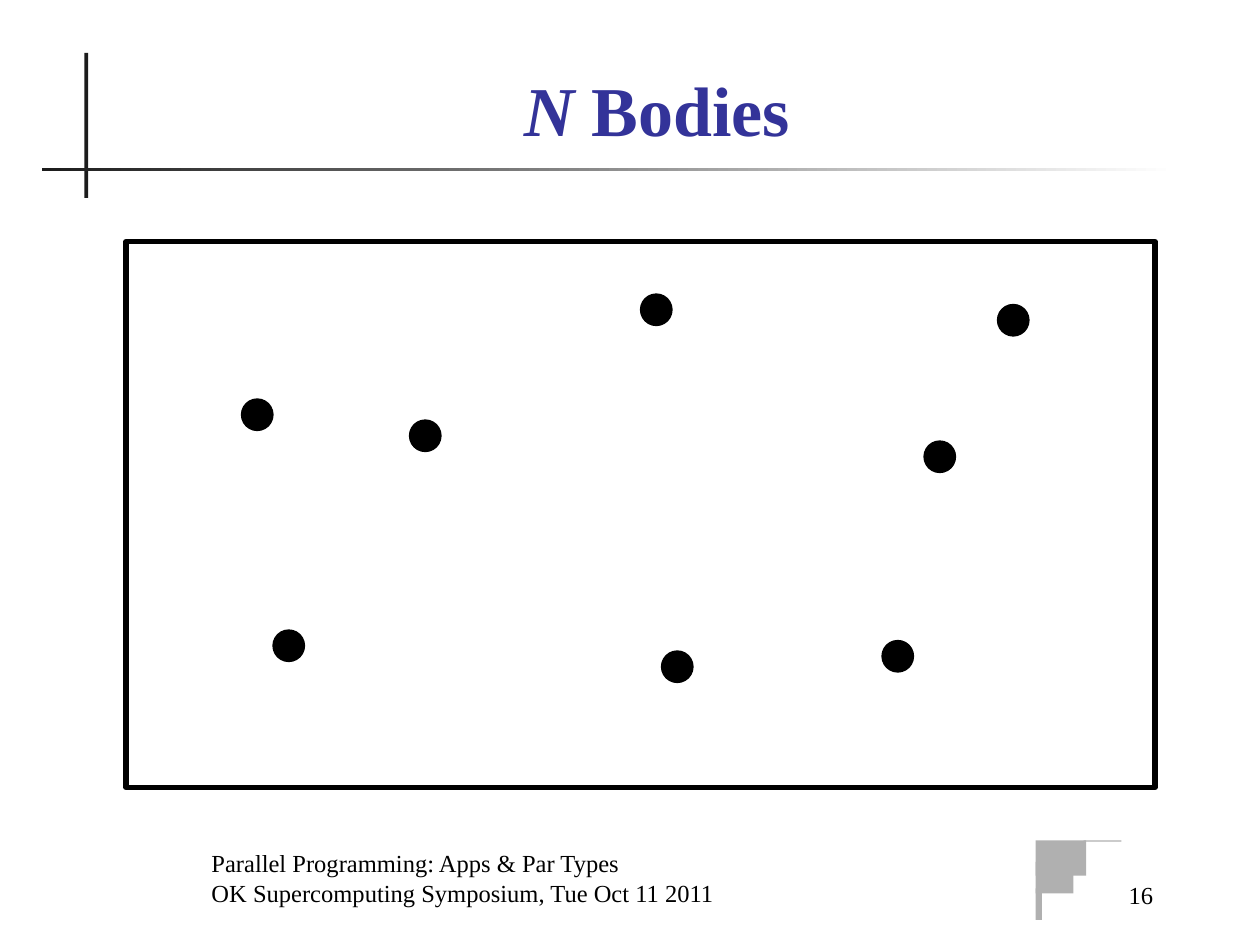
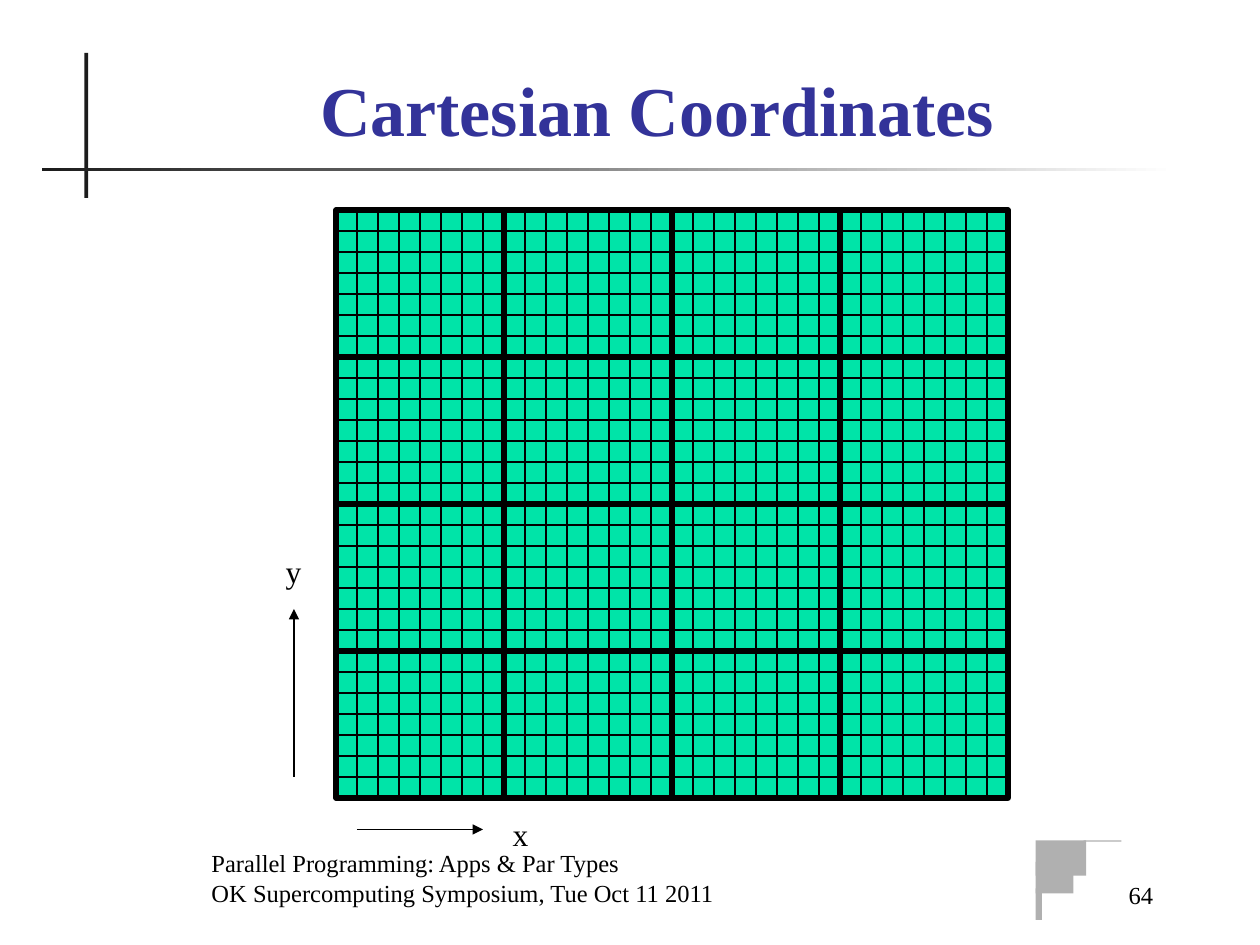
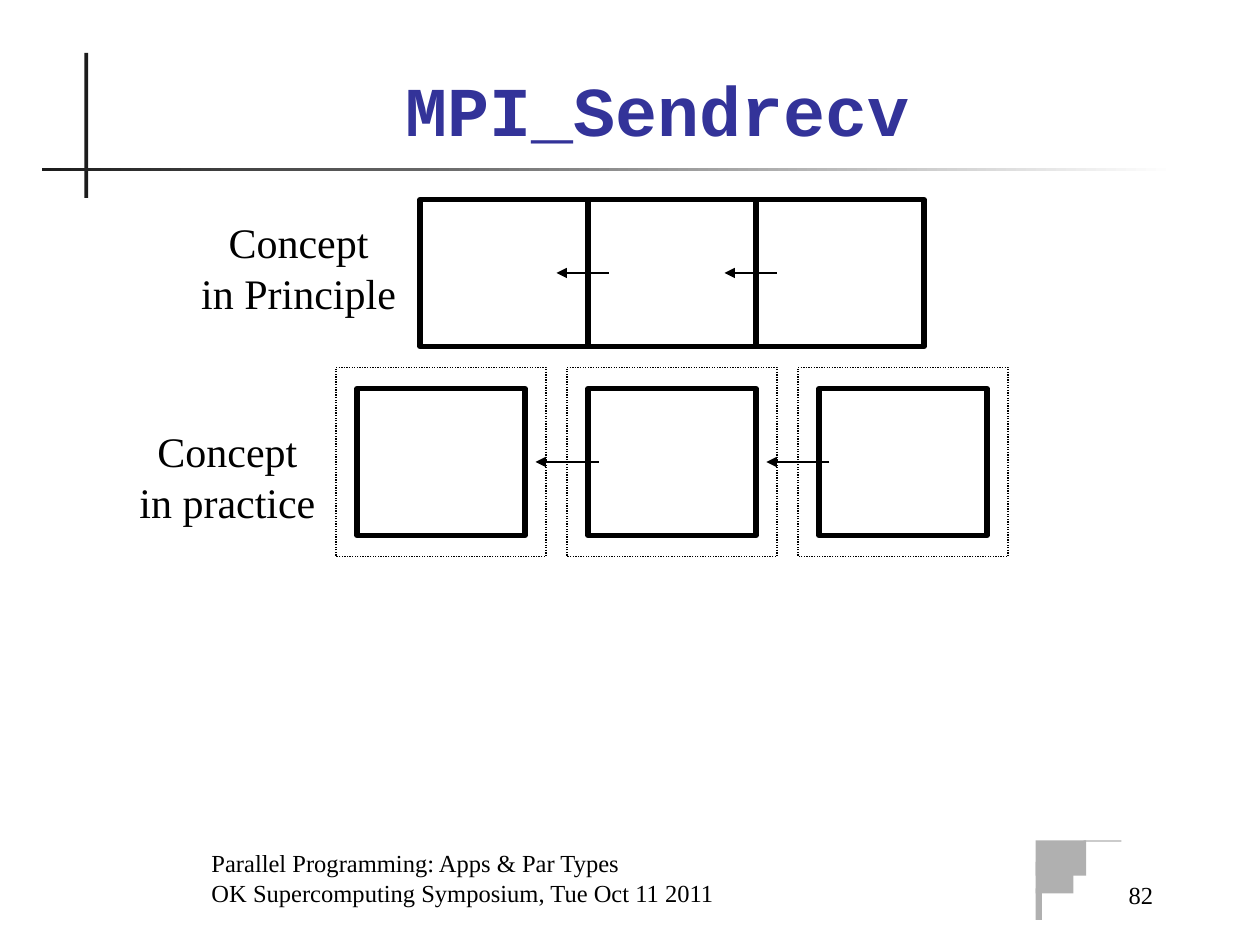
from dataclasses import dataclass
from itertools import product

from lxml import etree
from pptx import Presentation
from pptx import util as u
from pptx.dml.color import RGBColor
from pptx.enum import dml, shapes, text
from pptx.oxml import ns
from pptx.slide import Slide


@dataclass(frozen=True)
class Theme:
    ink: str = "000000"
    title: str = "333399"
    rule: str = "1C1C1C"
    mark: str = "B0B0B0"
    mesh: str = "00E4A8"
    paper: str = "FFFFFF"
    serif: str = "Times New Roman"
    mono: str = "Courier New"
    head: float = 40
    label: float = 24
    axis: float = 18
    foot: float = 14
    thin: float = 0.75
    thick: float = 3


@dataclass(frozen=True)
class Box:
    x: float
    y: float
    w: float
    h: float


@dataclass(frozen=True)
class Run:
    words: str
    size: float
    color: str = Theme.ink
    font: str = Theme.serif
    bold: bool = False
    slant: bool = False


T = Theme()
UNIT = 1 / 6  # drawing grid, in inches
RECT = shapes.MSO_SHAPE.RECTANGLE
OVAL = shapes.MSO_SHAPE.OVAL
LEFT, MID, RIGHT = text.PP_ALIGN.LEFT, text.PP_ALIGN.CENTER, text.PP_ALIGN.RIGHT
TOP, BASE = text.MSO_ANCHOR.TOP, text.MSO_ANCHOR.BOTTOM

TITLE = Box(0.83, 0.5, 8.77, 0.74)
FOOT = Box(1.58, 6.75, 6.08, 0.5)
NUMBER = Box(7.83, 6.77, 1.42, 0.5)
STEM = Box(0.67, 0.42, 0.03, 1.15)
RULE = Box(0.33, 1.33, 9, 0.03)
MARKS = [
    Box(8.22, 6.67, 0.4, 0.28),
    Box(8.22, 6.84, 0.3, 0.25),
    Box(8.22, 7.05, 0.05, 0.25),
    Box(8.6, 6.67, 0.3, 0.01),
]
FOOTER = ["Parallel Programming: Apps & Par Types",
          "OK Supercomputing Symposium, Tue Oct 11 2011"]


def cells(x: float, y: float, w: float, h: float) -> Box:
    """Turn grid units into a box in inches."""
    return Box(x * UNIT, y * UNIT, w * UNIT, h * UNIT)


def place(box: Box) -> list[u.Length]:
    return [u.Inches(v) for v in (box.x, box.y, box.w, box.h)]


def shape(slide: Slide, box: Box, fill: str = "", line: float = 0,
          kind: shapes.MSO_SHAPE = RECT):
    item = slide.shapes.add_shape(kind, *place(box))
    item.shadow.inherit = False
    if fill:
        item.fill.solid()
        item.fill.fore_color.rgb = RGBColor.from_string(fill)
    else:
        item.fill.background()
    if line:
        item.line.color.rgb = RGBColor.from_string(T.ink)
        item.line.width = u.Pt(line)
    else:
        item.line.fill.background()
    return item


def stroke(slide: Slide, x1: float, y1: float, x2: float, y2: float,
           arrow: bool = False) -> None:
    """Draw a thin line between two points in grid units."""
    ends = [u.Inches(v * UNIT) for v in (x1, y1, x2, y2)]
    item = slide.shapes.add_connector(shapes.MSO_CONNECTOR.STRAIGHT, *ends)
    item.line.color.rgb = RGBColor.from_string(T.ink)
    item.line.width = u.Pt(T.thin)
    if arrow:
        tip = etree.SubElement(item.line._get_or_add_ln(), ns.qn("a:tailEnd"))
        tip.set("type", "triangle")
    etree.SubElement(item._element.spPr, ns.qn("a:effectLst"))


def write(slide: Slide, box: Box, lines: list[list[Run]],
          align: text.PP_ALIGN = MID, anchor: text.MSO_ANCHOR = TOP,
          wrap: bool = True) -> None:
    frame = slide.shapes.add_textbox(*place(box)).text_frame
    frame.word_wrap = wrap
    frame.vertical_anchor = anchor
    for i, runs in enumerate(lines):
        para = frame.add_paragraph() if i else frame.paragraphs[0]
        para.alignment = align
        for run in runs:
            part = para.add_run()
            part.text = run.words
            font = part.font
            font.name, font.size = run.font, u.Pt(run.size)
            font.bold, font.italic = run.bold, run.slant
            font.color.rgb = RGBColor.from_string(run.color)


def head(words: str, font: str = T.serif, slant: bool = False) -> Run:
    return Run(words, T.head, T.title, font, True, slant)


def start(deck, number: int, title: list[Run]) -> Slide:
    """Add a slide with the shared rules, corner mark, title and footer."""
    slide = deck.slides.add_slide(deck.slide_layouts[6])
    shape(slide, STEM, T.rule)
    fade = shape(slide, RULE).fill
    fade.gradient()
    fade.gradient_angle = 0
    for stop, color in zip(fade.gradient_stops, (T.rule, T.paper)):
        stop.color.rgb = RGBColor.from_string(color)
    for mark in MARKS:
        shape(slide, mark, T.mark)
    write(slide, NUMBER, [[Run(str(number), T.foot)]], RIGHT, BASE)
    write(slide, TITLE, [title], MID, BASE)
    write(slide, FOOT, [[Run(s, T.foot)] for s in FOOTER], LEFT, BASE)
    return slide


def bodies(deck) -> None:
    slide = start(deck, 16, [head("N", slant=True), head(" Bodies")])
    shape(slide, cells(6, 11.5, 49, 26), line=T.thick)
    spots = [(11.5, 19), (19.5, 20), (47.5, 14.5), (44, 21),
             (42, 30.5), (31.5, 31), (30.5, 14), (13, 30)]
    for x, y in spots:
        shape(slide, cells(x, y, 1.5, 1.5), T.ink, T.thin, OVAL)


def mesh(deck) -> None:
    slide = start(deck, 64, [head("Cartesian Coordinates")])
    left, top, wide, high, count = 16, 10, 8, 7, 4
    right, low = left + count * wide, top + count * high
    shape(slide, cells(left, top, right - left, low - top), T.mesh, T.thin)
    for x in range(left + 1, right):
        stroke(slide, x, top, x, low)
    for y in range(top + 1, low):
        stroke(slide, left, y, right, y)
    for row, col in product(range(count), repeat=2):
        block = cells(left + col * wide, top + row * high, wide, high)
        shape(slide, block, line=T.thick)
    stroke(slide, 17, 39.5, 23, 39.5, arrow=True)
    stroke(slide, 14, 37, 14, 29, arrow=True)
    write(slide, Box(3.92, 6.42, 0.42, 0.4), [[Run("x", T.axis)]])
    write(slide, Box(2.08, 4.33, 0.5, 0.4), [[Run("y", T.axis)]])


def swap(deck) -> None:
    slide = start(deck, 82, [head("MPI_Sendrecv", T.mono)])
    for i in range(3):
        shape(slide, cells(20 + 8 * i, 9.5, 8, 7), line=T.thick)
        x = 16 + 11 * i
        shape(slide, cells(x + 1, 18.5, 8, 7), line=T.thick)
        halo = shape(slide, cells(x, 17.5, 10, 9), line=T.thin)
        halo.line.dash_style = dml.MSO_LINE.ROUND_DOT
    for i in range(2):
        x = 29 + 8 * i
        stroke(slide, x, 13, x - 2.5, 13, arrow=True)
        x = 28.5 + 11 * i
        stroke(slide, x, 22, x - 3, 22, arrow=True)
    notes = [(Box(1.49, 1.67, 1.76, 0.91), "in Principle"),
             (Box(1, 3.33, 1.61, 0.91), "in practice")]
    for box, kind in notes:
        lines = [[Run(s, T.label)] for s in ("Concept", kind)]
        write(slide, box, lines, wrap=False)


def main() -> None:
    deck = Presentation()
    deck.slide_width, deck.slide_height = u.Inches(10), u.Inches(7.5)
    bodies(deck)
    mesh(deck)
    swap(deck)
    deck.save("out.pptx")


if __name__ == "__main__":
    main()
